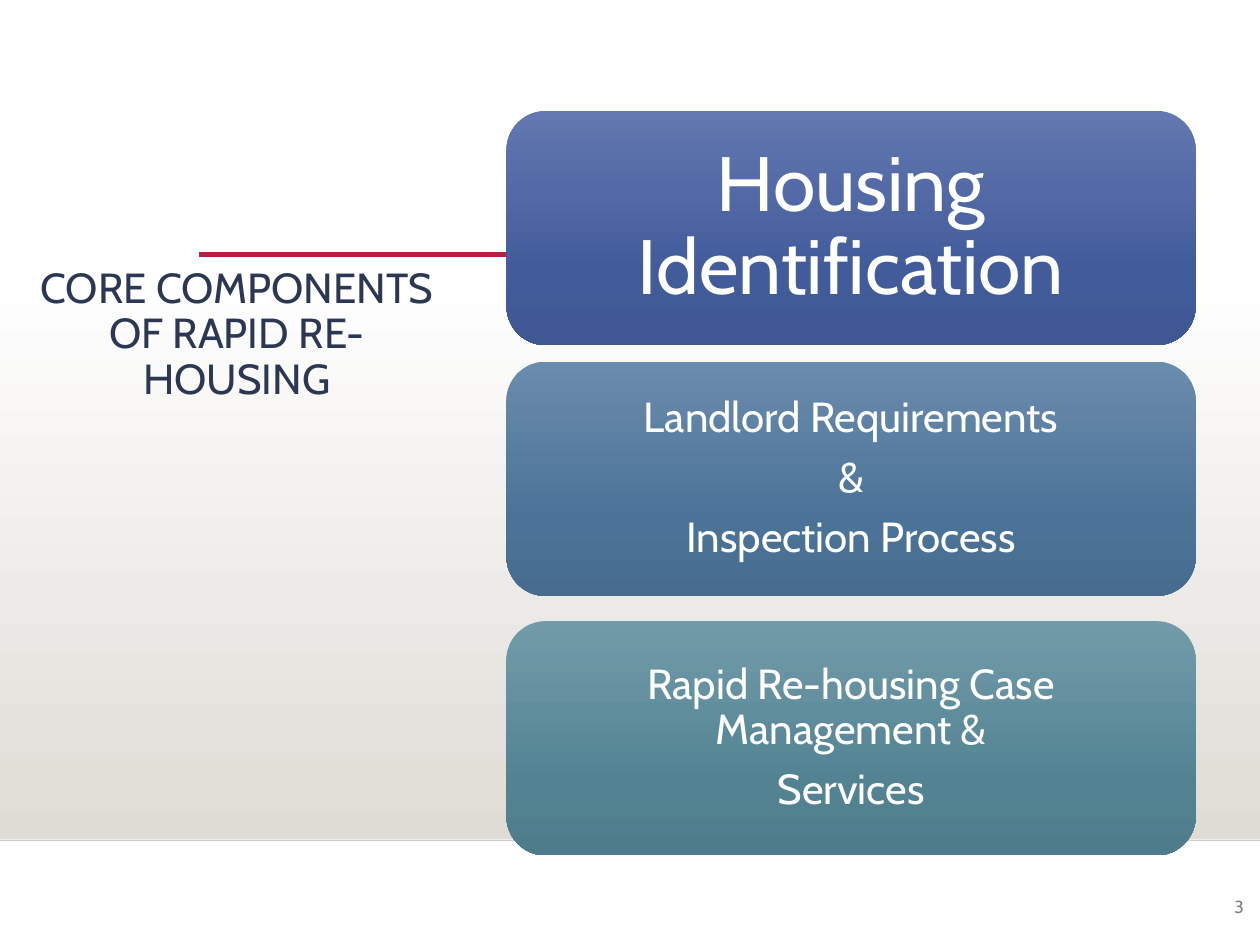
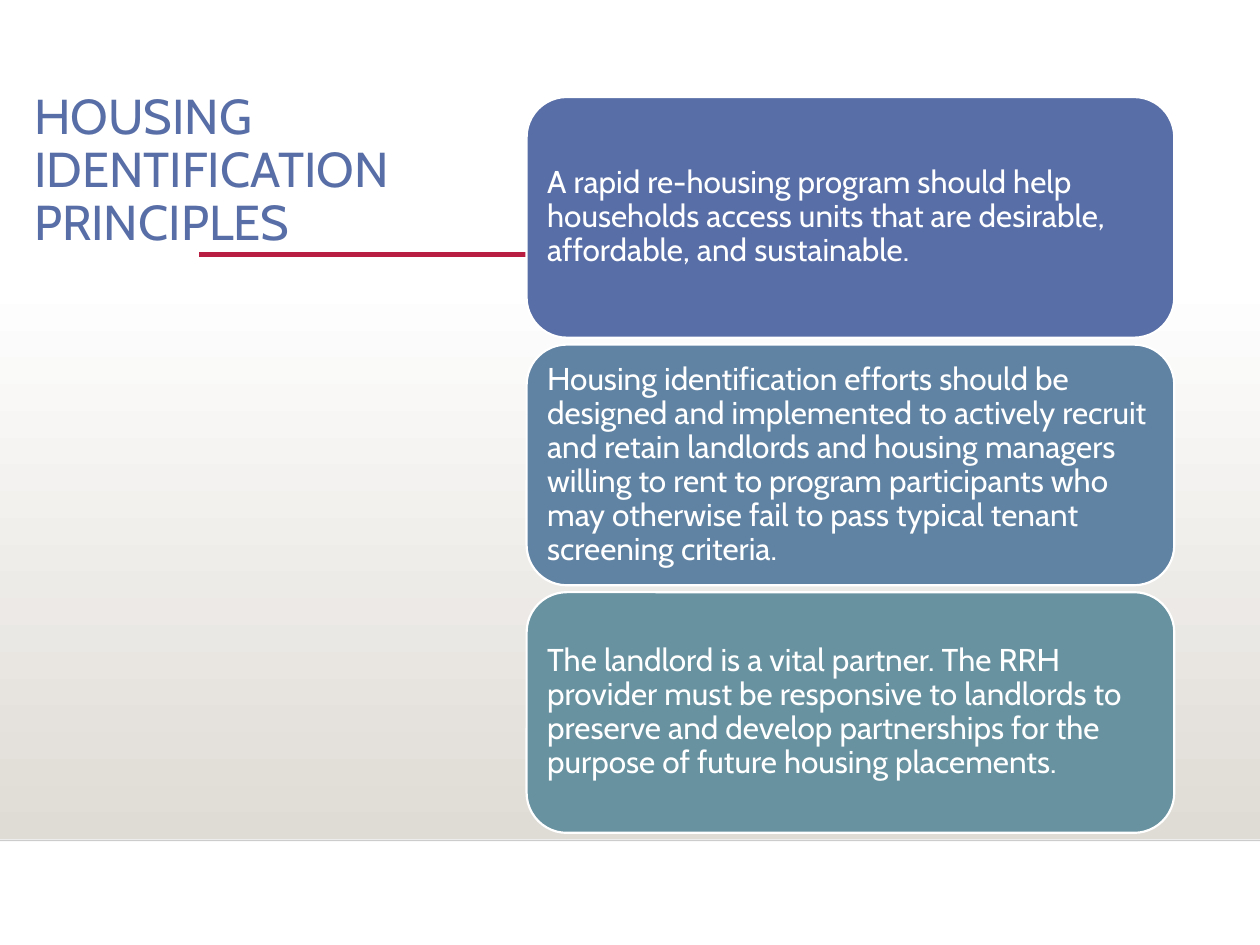
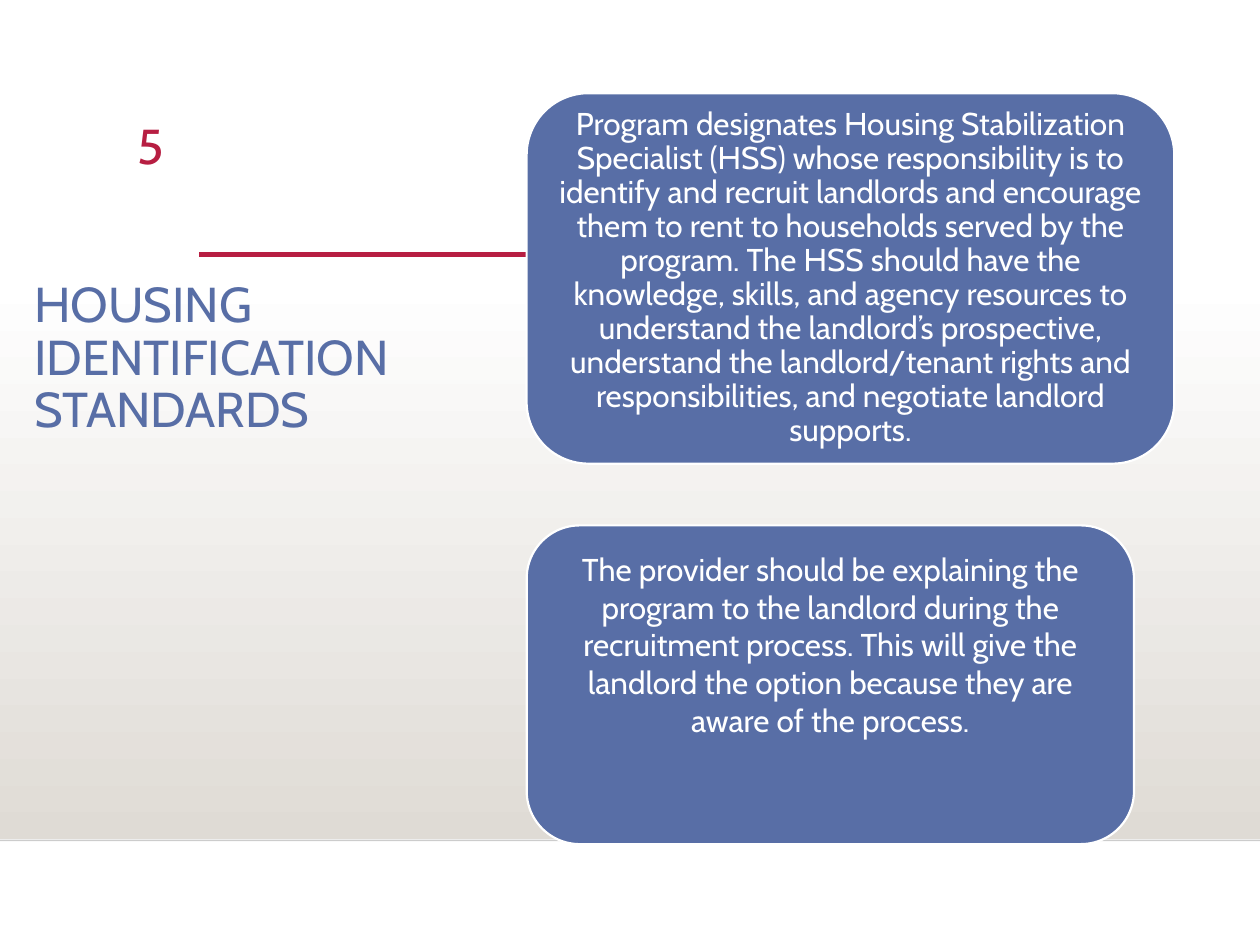
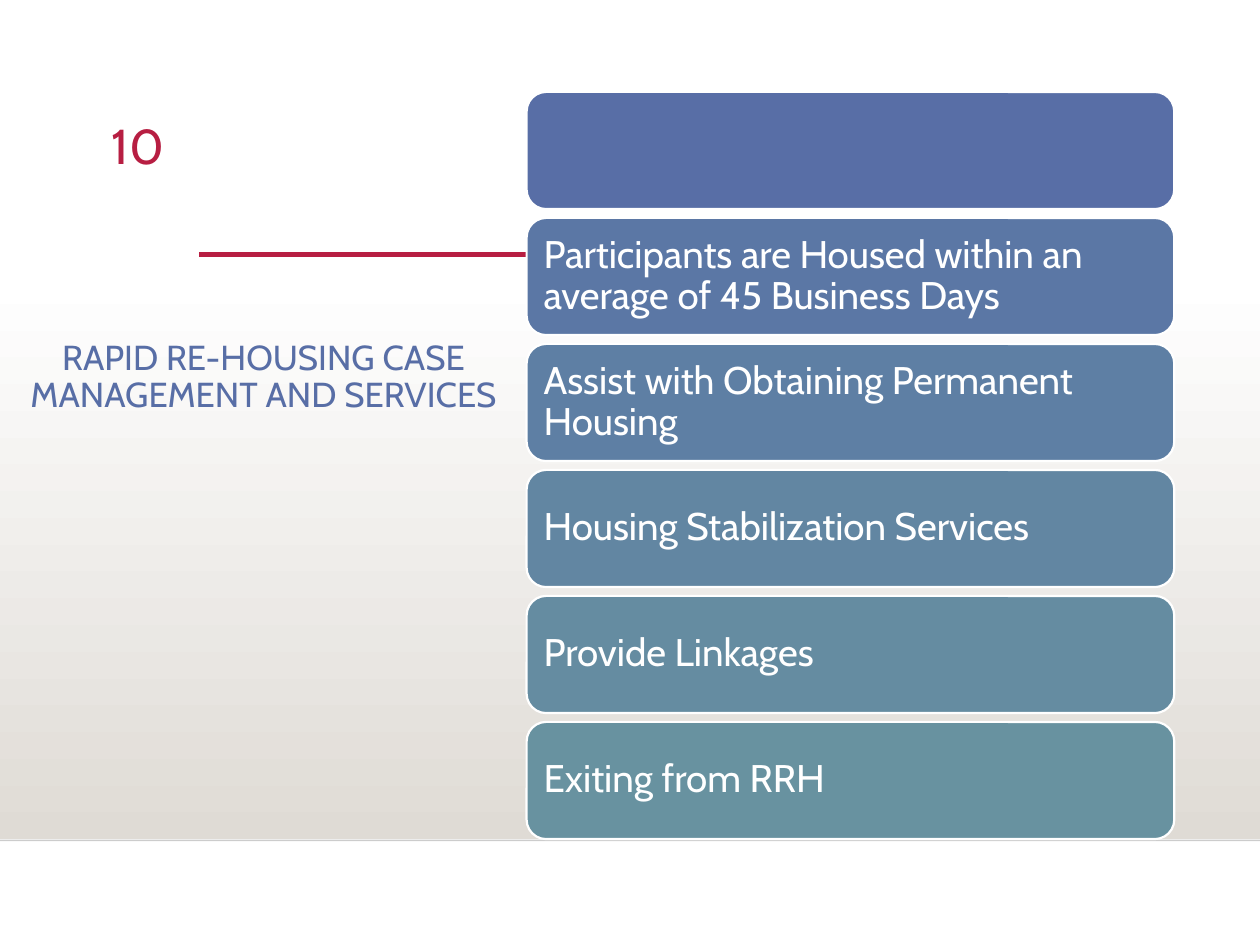
from pptx import Presentation
from pptx.dml.color import RGBColor
from pptx.enum.shapes import MSO_CONNECTOR, MSO_SHAPE
from pptx.enum.text import MSO_ANCHOR, MSO_AUTO_SIZE, PP_ALIGN
from pptx.oxml.ns import qn
from pptx.util import Inches, Pt
from lxml.etree import SubElement

FONT = "Cabin"
COLORS = {
    "white": "FFFFFF", "sand": "DFDBD5", "rule": "000001", "red": "B71E42",
    "navy": "2C3753", "blue": "586EA6", "gray": "808080",
}
# Gradient stops: percent along the shape, from top to bottom
SAND_FADE = [(0, COLORS["white"]), (100, COLORS["sand"])]
BLUE_FADE = [(0, "6378B0"), (69, "425B9B"), (100, "3F5793")]
STEEL_FADE = [(0, "6A8CAD"), (69, "4B7297"), (100, "476C8F")]
TEAL_FADE = [(0, "729BA9"), (69, "538393"), (100, "4F7C8B")]

CENTER, LEFT, RIGHT = PP_ALIGN.CENTER, PP_ALIGN.LEFT, PP_ALIGN.RIGHT
TOP, MIDDLE, BOTTOM = MSO_ANCHOR.TOP, MSO_ANCHOR.MIDDLE, MSO_ANCHOR.BOTTOM
NUMBER_BOX = (0.53, 0.87, 0.87, 0.55)


def stack(left, top, width, height, step, count):
    return [(left, top + i * step, width, height) for i in range(count)]


def card(box, fill, lines, size, inset, **style):
    return dict(box=box, fill=fill, lines=lines, size=size,
                insets=(inset,) * 4, **style)


core_boxes = [(4.02, top, 5.47, 1.86) for top in (0.88, 2.87, 4.93)]
principles = [
    ("586EA6", "A rapid re-housing program should help households access units "
               "that are desirable, affordable, and sustainable."),
    ("6083A3", "Housing identification efforts should be designed and implemented "
               "to actively recruit and retain landlords and housing managers "
               "willing to rent to program participants who may otherwise fail to "
               "pass typical tenant screening criteria."),
    ("6892A0", "The landlord is a vital partner. The RRH provider must be "
               "responsive to landlords to preserve and develop partnerships for "
               "the purpose of future housing placements."),
]
services = [
    ("586EA6", ""),
    ("5B77A5", "Participants are Housed within an average of 45 Business Days"),
    ("5E7FA4", "Assist with Obtaining Permanent Housing"),
    ("6286A2", "Housing Stabilization Services"),
    ("658CA1", "Provide Linkages"),
    ("6892A0", "Exiting from RRH"),
]

SLIDES = [
    dict(
        title=dict(text="CORE COMPONENTS OF RAPID RE-HOUSING",
                   box=(0.17, 1.5, 3.42, 1.75), size=24, color="navy",
                   align=CENTER, anchor=BOTTOM),
        number=dict(text="3", box=(9.6, 7.06, 0.37, 0.4), size=10, color="gray"),
        cards=[
            card(core_boxes[0], BLUE_FADE, ["Housing Identification"],
                 44, 0.18, align=CENTER),
            card(core_boxes[1], STEEL_FADE,
                 ["Landlord Requirements", "&", "Inspection Process"],
                 24, 0.1, align=CENTER),
            card(core_boxes[2], TEAL_FADE,
                 ["Rapid Re-housing Case Management &", "Services"],
                 24, 0.1, align=CENTER),
        ],
    ),
    dict(
        title=dict(text="HOUSING IDENTIFICATION PRINCIPLES",
                   box=(0.17, 0.68, 3.39, 6.02), size=28),
        cards=[card(box, fill, [text], 18, 0.07) for box, (fill, text)
               in zip(stack(4.18, 0.77, 5.14, 1.91, 1.965, 3), principles)],
    ),
    dict(
        title=dict(text="HOUSING IDENTIFICATION STANDARDS",
                   box=(0.17, 2.17, 3.39, 4.53), size=28),
        number=dict(text="5", box=NUMBER_BOX, size=28, color="red"),
        cards=[
            card((4.18, 0.74, 5.14, 2.94), COLORS["blue"], [
                "Program designates Housing Stabilization Specialist (HSS) whose "
                "responsibility is to identify and recruit landlords and encourage "
                "them to rent to households served by the program. The HSS should "
                "have the knowledge, skills, and agency resources to understand "
                "the landlord’s prospective, understand the landlord/tenant rights "
                "and responsibilities, and negotiate landlord supports."],
                18, 0.07, align=CENTER),
            card((4.18, 4.17, 4.82, 2.53), COLORS["blue"], [
                "The provider should be explaining the program to the landlord "
                "during the recruitment process. This will give the landlord the "
                "option because they are aware of the process."],
                18, 0.07, align=CENTER, anchor=TOP, spacing=1.0),
        ],
    ),
    dict(
        title=dict(text="RAPID RE-HOUSING CASE MANAGEMENT AND SERVICES",
                   box=(0, 2.33, 4.18, 2.25), size=19.8, align=CENTER,
                   insets=(0.1, 0.37, 0.1, 0.05)),
        number=dict(text="10", box=NUMBER_BOX, size=28, color="red"),
        cards=[card(box, fill, [text] if text else [], 22, 0.09)
               for box, (fill, text)
               in zip(stack(4.18, 0.73, 5.14, 0.93, 1.0, 6), services)],
    ),
]


def rgb(value):
    return RGBColor.from_string(value)


def inches(box):
    return [Inches(v) for v in box]


def fade(sp, stops):
    """Fill a shape from top to bottom with the given colour stops."""
    sp.fill.gradient()
    sp.fill.gradient_angle = 270
    gs_list = sp.element.spPr.find(qn("a:gradFill")).find(qn("a:gsLst"))
    for gs in list(gs_list):
        gs_list.remove(gs)
    for percent, color in stops:
        gs = SubElement(gs_list, qn("a:gs"), pos=str(percent * 1000))
        SubElement(gs, qn("a:srgbClr"), val=color)


def write(tf, lines, size, color, align=LEFT, anchor=TOP, spacing=0.9,
          after=0, insets=(0.1, 0.05, 0.1, 0.05)):
    tf.word_wrap = True
    tf.auto_size = MSO_AUTO_SIZE.NONE
    tf.vertical_anchor = anchor
    (tf.margin_left, tf.margin_top,
     tf.margin_right, tf.margin_bottom) = inches(insets)
    for i, line in enumerate(lines):
        p = tf.add_paragraph() if i else tf.paragraphs[0]
        p.text = line
        p.alignment = align
        p.line_spacing = spacing
        p.space_before = Pt(0)
        p.space_after = Pt(after)
        p.font.name = FONT
        p.font.size = Pt(size)
        p.font.color.rgb = rgb(COLORS[color])


def add_rule(slide, left, right, y, color, width):
    rule = slide.shapes.add_connector(
        MSO_CONNECTOR.STRAIGHT, *inches((left, y, right, y)))
    rule.line.color.rgb = rgb(COLORS[color])
    rule.line.width = Pt(width)
    SubElement(rule.element.spPr, qn("a:effectLst"))
    return rule


def add_backdrop(slide):
    """Put the shared band and rules on the layout that the slide uses."""
    band = slide.shapes.add_shape(MSO_SHAPE.RECTANGLE, *inches((0, 2.2, 10, 4.46)))
    band.shadow.inherit = False
    band.line.fill.background()
    fade(band, SAND_FADE)
    floor = add_rule(slide, 0, 10, 6.67, "rule", 1)
    SubElement(next(floor.element.iter(qn("a:srgbClr"))), qn("a:alpha"), val="20000")
    accent = add_rule(slide, 1.58, 8.77, 2.02, "red", 2.5)
    for sp in (band, floor, accent):
        slide.slide_layout.shapes.element.append(sp.element)


def add_title(slide, text, box, size, color="blue", **style):
    title = slide.shapes.title
    title.left, title.top, title.width, title.height = inches(box)
    write(title.text_frame, [text], size, color, **style)


def add_card(slide, box, fill, lines, size, insets, align=LEFT,
             anchor=MIDDLE, spacing=0.9):
    sp = slide.shapes.add_shape(MSO_SHAPE.ROUNDED_RECTANGLE, *inches(box))
    sp.shadow.inherit = False
    if isinstance(fill, list):
        fade(sp, fill)
        sp.line.fill.background()
    else:
        sp.fill.solid()
        sp.fill.fore_color.rgb = rgb(fill)
        sp.line.color.rgb = rgb(COLORS["white"])
        sp.line.width = Pt(1.25)
    write(sp.text_frame, lines, size, "white", align, anchor, spacing,
          after=round(size * 0.35, 1), insets=insets)


def add_number(slide, text, box, size, color):
    sp = slide.shapes.add_textbox(*inches(box))
    write(sp.text_frame, [text], size, color, align=RIGHT, spacing=1.0, after=6)


def main():
    prs = Presentation()
    prs.slide_width, prs.slide_height = Inches(10), Inches(7.5)
    layout = prs.slide_layouts[5]
    for i, content in enumerate(SLIDES):
        slide = prs.slides.add_slide(layout)
        if i == 0:
            add_backdrop(slide)
        add_title(slide, **content["title"])
        for item in content["cards"]:
            add_card(slide, **item)
        if "number" in content:
            add_number(slide, **content["number"])
    prs.save("out.pptx")


if __name__ == "__main__":
    main()
